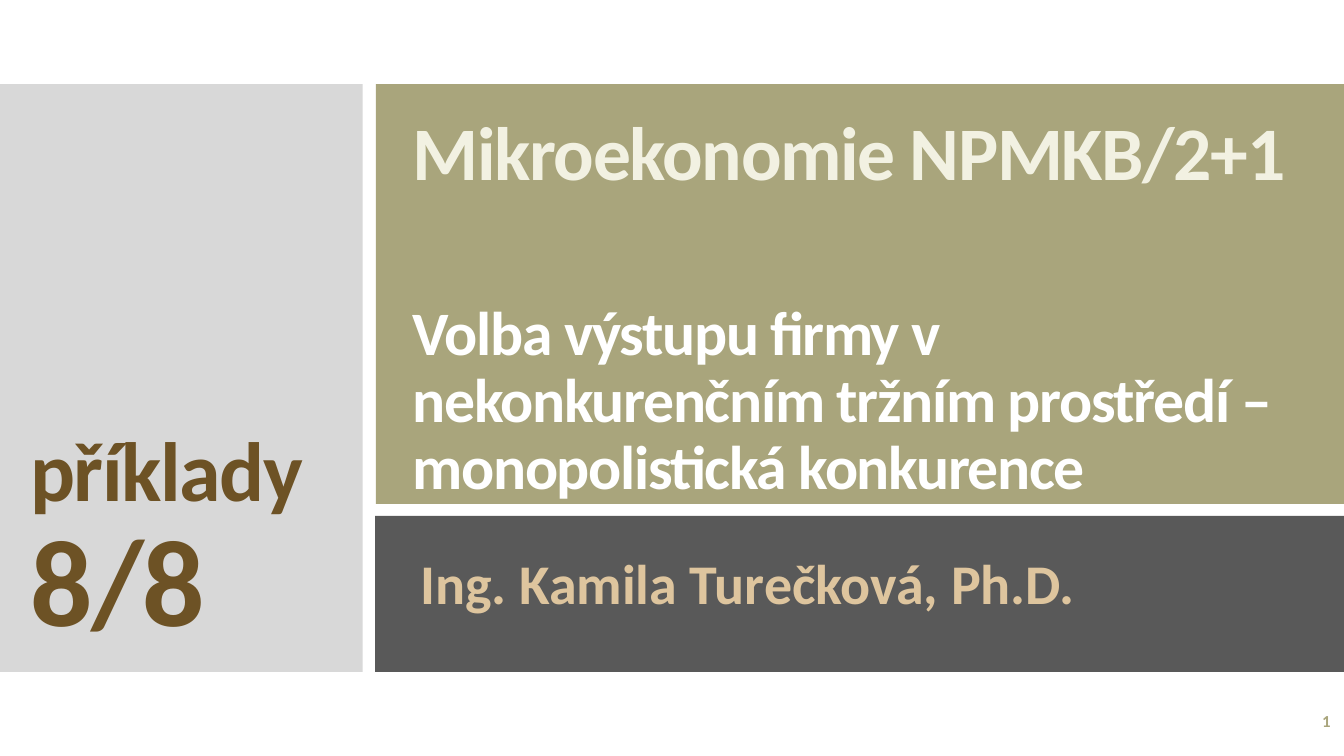
from dataclasses import dataclass

from lxml.etree import SubElement
from pptx import Presentation
from pptx.dml.color import RGBColor
from pptx.enum.shapes import MSO_SHAPE
from pptx.enum.text import MSO_ANCHOR, MSO_AUTO_SIZE, PP_ALIGN
from pptx.oxml.ns import qn
from pptx.util import Pt


@dataclass(frozen=True)
class Theme:
    font: str = "Calibri"
    olive: str = "A9A57C"
    cream: str = "F2F1E2"
    white: str = "FFFFFF"
    gray: str = "C8C8C8"
    dark: str = "595959"
    sand: str = "DEC59E"
    brown: str = "6D5225"
    course: float = 54
    topic: float = 44.1
    author: float = 40
    label: float = 60
    count: float = 88
    page: float = 12


def write(par, text, *, font, size, color, track=0, align=PP_ALIGN.LEFT,
          line=0.9, before=0):
    """Fill a paragraph with one bold run; track is letter spacing in points."""
    par.alignment = align
    par.line_spacing = line
    par.space_before = Pt(before)
    par.space_after = Pt(0)
    run = par.add_run()
    run.text = text
    run.font.name = font
    run.font.size = Pt(size)
    run.font.bold = True
    run.font.color.rgb = RGBColor.from_string(color)
    if track:
        run.font._element.set("spc", str(int(track * 100)))


class Deck:
    def __init__(self, theme):
        self.theme = theme
        self.file = Presentation()
        self.file.slide_width = Pt(960)
        self.file.slide_height = Pt(540)
        self.slide = self.file.slides.add_slide(self.file.slide_layouts[0])

    def block(self, box, color, alpha=None):
        shape = self.slide.shapes.add_shape(MSO_SHAPE.RECTANGLE, *map(Pt, box))
        shape.shadow.inherit = False
        shape.line.fill.background()
        shape.fill.solid()
        shape.fill.fore_color.rgb = RGBColor.from_string(color)
        if alpha:
            tint = shape._element.spPr.find(".//" + qn("a:srgbClr"))
            SubElement(tint, qn("a:alpha")).set("val", str(alpha * 1000))

    def fill(self, shape, box, lines, anchor):
        """Place a text shape and write one paragraph per (text, format) pair."""
        shape.left, shape.top, shape.width, shape.height = map(Pt, box)
        frame = shape.text_frame
        frame.word_wrap = True
        frame.auto_size = MSO_AUTO_SIZE.NONE
        frame.vertical_anchor = anchor
        for spot, (text, form) in enumerate(lines):
            par = frame.add_paragraph() if spot else frame.paragraphs[0]
            write(par, text, font=self.theme.font, **form)
        return frame

    def title(self, box, lines):
        frame = self.fill(self.slide.shapes.title, box, lines, MSO_ANCHOR.BOTTOM)
        frame.margin_bottom = Pt(1)

    def body(self, box, lines):
        self.fill(self.slide.placeholders[1], box, lines, MSO_ANCHOR.TOP)

    def text(self, box, lines, anchor):
        shape = self.slide.shapes.add_textbox(*map(Pt, box))
        self.fill(shape, box, lines, anchor)

    def save(self):
        self.file.save("out.pptx")


def main():
    theme = Theme()
    deck = Deck(theme)
    deck.block((0, 60, 259, 420), theme.gray, alpha=70)
    deck.block((268.5, 60, 691.5, 300), theme.olive)
    deck.block((268, 368.5, 692, 111.5), theme.dark)
    # Bring the placeholders in front of the blocks.
    tree = deck.slide.shapes._spTree
    for holder in list(deck.slide.placeholders):
        tree.append(holder._element)

    deck.title((287.5, 128, 659, 232), [
        ("Mikroekonomie NPMKB/2+1",
         dict(size=theme.course, color=theme.cream, track=-1)),
        ("Volba výstupu firmy v nekonkurenčním tržním prostředí – "
         "monopolistická konkurence",
         dict(size=theme.topic, color=theme.white, track=-1, before=75.5)),
    ])
    deck.body((293, 394, 566, 60.5), [
        ("Ing. Kamila Turečková, Ph.D.",
         dict(size=theme.author, color=theme.sand)),
    ])
    deck.text((14.5, 68.5, 230.5, 401.5), [
        ("příklady", dict(size=theme.label, color=theme.brown, track=-1)),
        ("8/8", dict(size=theme.count, color=theme.brown, track=-1)),
    ], MSO_ANCHOR.BOTTOM)
    deck.text((837.5, 500.5, 120, 29), [
        ("1", dict(size=theme.page, color=theme.olive, line=1,
                   align=PP_ALIGN.RIGHT)),
    ], MSO_ANCHOR.MIDDLE)
    deck.save()


if __name__ == "__main__":
    main()
